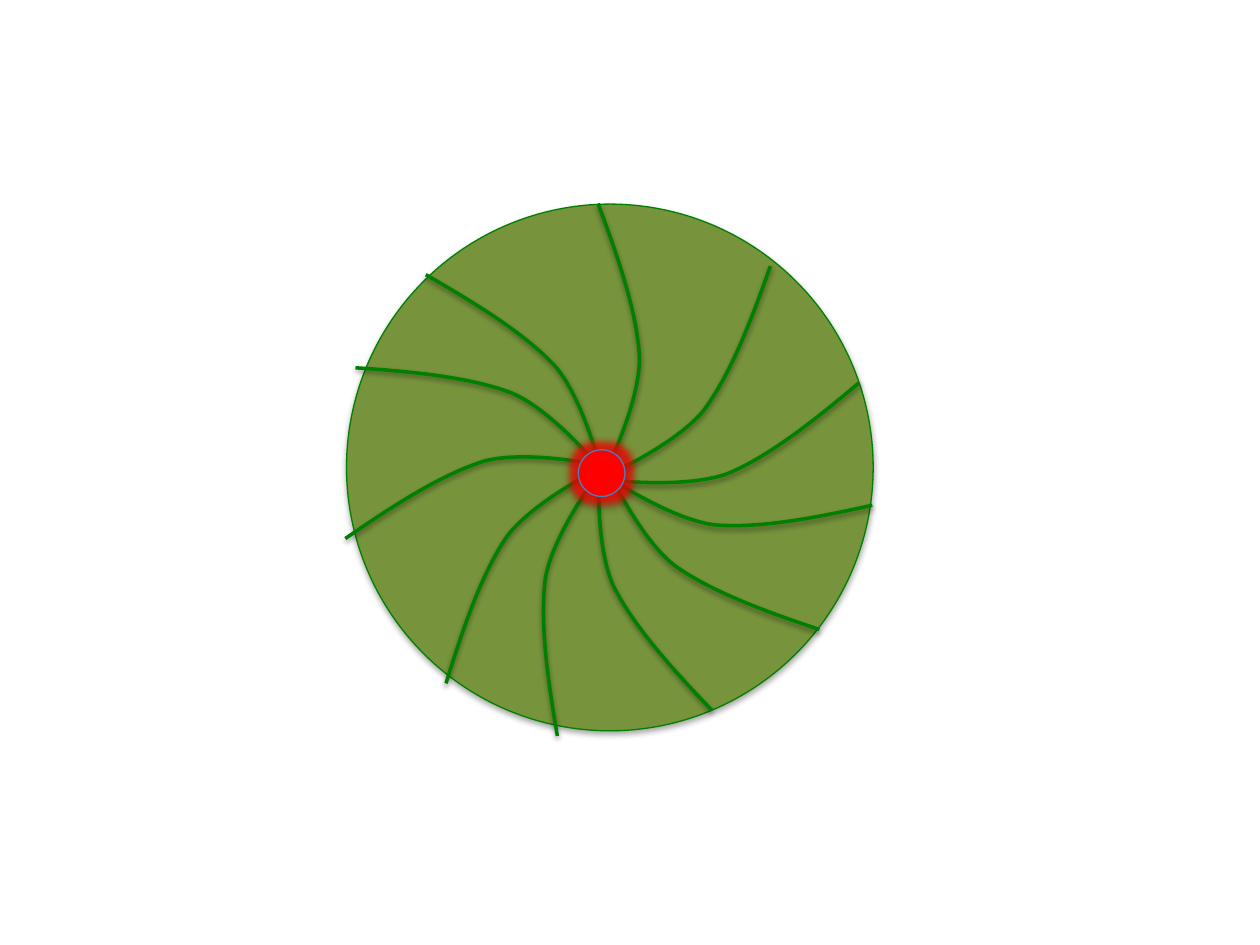
from typing import NamedTuple

from lxml.etree import SubElement
from pptx import Presentation
from pptx.dml.color import RGBColor
from pptx.enum.shapes import MSO_SHAPE
from pptx.oxml.ns import qn
from pptx.util import Inches, Pt


class Disc(NamedTuple):
    """A round part: place, width and colours."""
    left: float
    top: float
    size: float
    fill: str
    edge: str


class Vein(NamedTuple):
    """A curved line: place of its frame and turn in degrees."""
    left: float
    top: float
    turn: float


GREEN = "008000"
RED = "FF0000"
LEAF = Disc(2.75, 1.62, 4.18, "77933C", GREEN)
HEART = Disc(4.59, 3.57, 0.37, RED, "4B7EBC")
CURVE = [(40, 23), (79, 47), (103, 73), (126, 100), (140, 159), (140, 159)]
VEINS = [
    Vein(4.08, 1.88, 39.6),
    Vein(4.76, 2.15, 79.5),
    Vein(3.38, 2.18, 0),
    Vein(5.17, 3.10, 137.6),
    Vein(5.13, 2.63, 110),
    Vein(4.96, 3.56, 168.6),
    Vein(3.10, 2.53, 333.9),
    Vein(3.06, 3.19, 295.5),
    Vein(3.89, 4.00, 230.4),
    Vein(4.50, 3.88, 196.4),
    Vein(3.46, 3.77, 257.2),
]
SHADE = {"blurRad": Pt(3.1), "dir": 90 * 60000, "rotWithShape": 0}


def paint(code: str) -> RGBColor:
    """Turn a hex string into a colour."""
    return RGBColor.from_string(code)


def effect(shape, kind: str, code: str, alpha: int, form: dict) -> None:
    """Add a glow or a shadow to a shape."""
    shape.shadow.inherit = False
    base = shape._element.spPr.find(qn("a:effectLst"))
    node = SubElement(base, qn(f"a:{kind}"))
    for name, value in form.items():
        node.set(name, str(value))
    tint = SubElement(node, qn("a:srgbClr"), val=code)
    SubElement(tint, qn("a:alpha"), val=str(alpha * 1000))


def outline(shape, code: str, width: float) -> None:
    """Set the colour and width of a line."""
    shape.line.color.rgb = paint(code)
    shape.line.width = Pt(width)


def draw_disc(group, disc: Disc, glow: float = 0) -> None:
    """Draw a round part with a shadow, and a glow if it has one."""
    size = Inches(disc.size)
    shape = group.shapes.add_shape(
        MSO_SHAPE.OVAL, Inches(disc.left), Inches(disc.top), size, size)
    shape.fill.solid()
    shape.fill.fore_color.rgb = paint(disc.fill)
    outline(shape, disc.edge, 0.75)
    shape.shadow.inherit = False
    if glow:
        form = {"rad": Inches(glow)}
        base = shape._element.spPr.find(qn("a:effectLst"))
        node = SubElement(base, qn("a:glow"), rad=str(form["rad"]))
        tint = SubElement(node, qn("a:srgbClr"), val=disc.fill)
        SubElement(tint, qn("a:alpha"), val="75000")
    node = shape._element.spPr.find(qn("a:effectLst"))
    cast = SubElement(node, qn("a:outerShdw"))
    for name, value in {**SHADE, "dist": Pt(1.8)}.items():
        cast.set(name, str(value))
    tint = SubElement(cast, qn("a:srgbClr"), val="000000")
    SubElement(tint, qn("a:alpha"), val="35000")


def bend(shape) -> None:
    """Join each three straight steps of a freeform into one curve."""
    route = shape._element.xpath(".//a:path")[0]
    steps = route.findall(qn("a:lnTo"))
    for start in range(0, len(steps), 3):
        curve = SubElement(route, qn("a:cubicBezTo"))
        for step in steps[start:start + 3]:
            curve.append(step[0])
            route.remove(step)


def draw_vein(group, vein: Vein) -> None:
    """Draw one turned curve with a shadow."""
    pen = group.shapes.build_freeform(0, 0, scale=Inches(0.01))
    pen.add_line_segments(CURVE, close=False)
    shape = pen.convert_to_shape(Inches(vein.left), Inches(vein.top))
    bend(shape)
    shape.rotation = vein.turn
    shape.fill.background()
    outline(shape, GREEN, 2)
    effect(shape, "outerShdw", "000000", 38, {**SHADE, "dist": Pt(1.6)})


def main() -> None:
    """Build the slide and save it."""
    deck = Presentation()
    for name, value in {"slide_width": 10, "slide_height": 7.5}.items():
        setattr(deck, name, Inches(value))
    slide = deck.slides.add_slide(deck.slide_layouts[6])
    group = slide.shapes.add_group_shape()
    draw_disc(group, LEAF)
    for vein in VEINS:
        draw_vein(group, vein)
    draw_disc(group, HEART, glow=0.11)
    deck.save("out.pptx")


if __name__ == "__main__":
    main()
